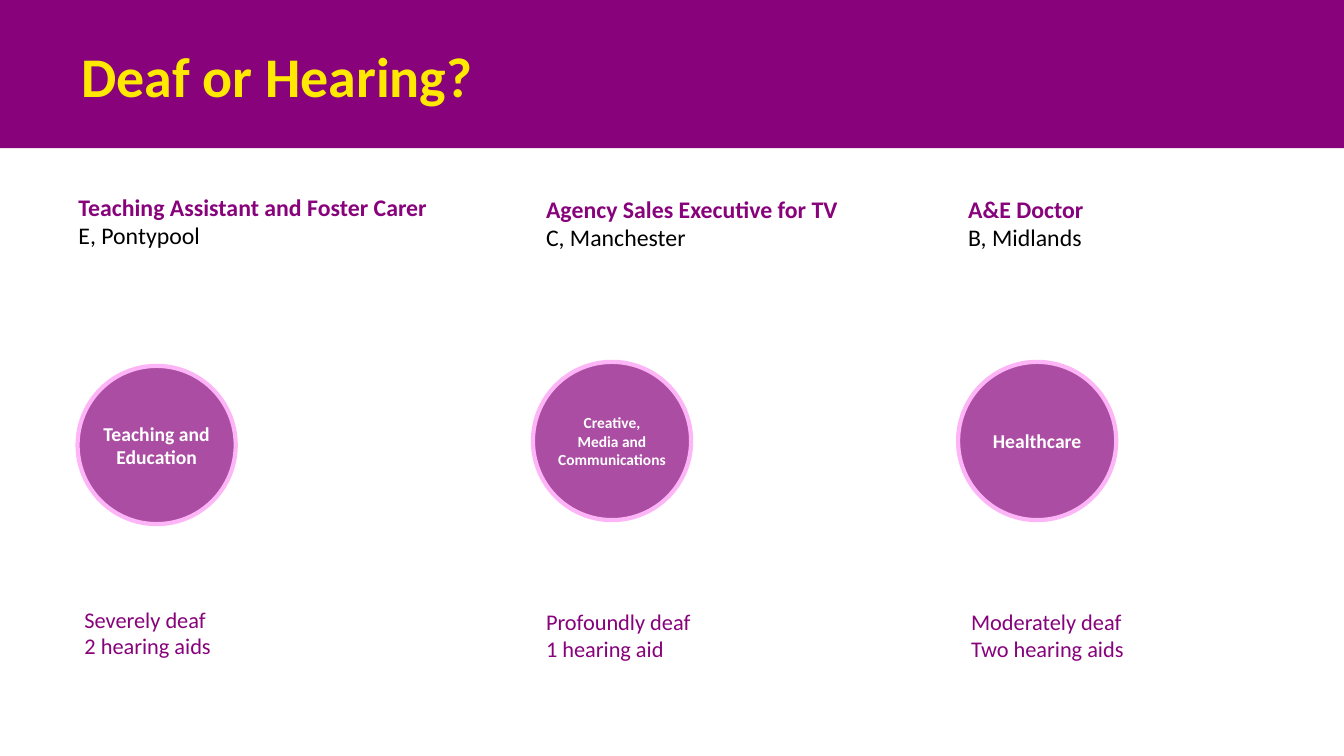
from pptx import Presentation
from pptx.dml.color import RGBColor
from pptx.enum.shapes import MSO_SHAPE
from pptx.enum.text import MSO_ANCHOR, PP_ALIGN
from pptx.util import Inches, Pt

RECTANGLE, OVAL = MSO_SHAPE.RECTANGLE, MSO_SHAPE.OVAL
TOP, MIDDLE = MSO_ANCHOR.TOP, MSO_ANCHOR.MIDDLE
LEFT, CENTER = PP_ALIGN.LEFT, PP_ALIGN.CENTER
COLORS = {
    "purple": "87027B",
    "yellow": "FFE900",
    "circle": "AB4EA3",
    "ring": "FEB5F7",
    "white": "FFFFFF",
    "black": "000000",
}
WIDE_INSETS = (0.13, 0.07)
NARROW_INSETS = (0.1, 0.05)


def color(name):
    return RGBColor.from_string(COLORS[name])


def write(shape, lines, size, insets, anchor=TOP, align=LEFT):
    frame = shape.text_frame
    frame.word_wrap = True
    frame.vertical_anchor = anchor
    frame.margin_left = frame.margin_right = Inches(insets[0])
    frame.margin_top = frame.margin_bottom = Inches(insets[1])
    frame.text = "\n".join(text for text, _, _ in lines)
    for paragraph, (_, ink, bold) in zip(frame.paragraphs, lines):
        paragraph.alignment = align
        paragraph.font.name = "Calibri"
        paragraph.font.size = Pt(size)
        paragraph.font.bold = bold
        paragraph.font.color.rgb = color(ink)


prs = Presentation()
prs.slide_width, prs.slide_height = Inches(13.34), Inches(7.5)
slide = prs.slides.add_slide(prs.slide_layouts[5])
shapes = slide.shapes

band = shapes.add_shape(RECTANGLE, 0, 0, prs.slide_width, Inches(1.47))
band.shadow.inherit = False
band.fill.solid()
band.fill.fore_color.rgb = color("purple")
band.line.fill.background()
title = shapes.title
title._element.addprevious(band._element)
title.left, title.top = Inches(0.68), Inches(0.35)
title.width, title.height = Inches(9.03), Inches(0.79)
write(title, [("Deaf or Hearing?", "yellow", True)], 40, WIDE_INSETS, MIDDLE)

people = [
    ("Teaching Assistant and Foster Carer", "E, Pontypool", (0.68, 4.49),
     ["Teaching and Education"], 14, (0.77, 3.63),
     ["Severely deaf", "2 hearing aids"], (0.74, 2.71), NARROW_INSETS),
    ("Agency Sales Executive for TV", "C, Manchester", (5.29, 3.95),
     ["Creative,\vMedia and", "Communications"], 11, (5.29, 3.59),
     ["Profoundly deaf", "1 hearing aid"], (5.29, 2.76), WIDE_INSETS),
    ("A&E Doctor", "B, Midlands", (9.48, 2.73),
     ["Healthcare"], 14, (9.51, 3.59),
     ["Moderately deaf", "Two hearing aids"], (9.51, 3.7), WIDE_INSETS),
]

for (job, place, (job_left, job_width), sector, sector_size, (circle_left, circle_top),
     hearing, (hearing_left, hearing_width), insets) in people:
    job_box = shapes.add_textbox(
        Inches(job_left), Inches(1.86), Inches(job_width), Inches(0.79))
    write(job_box, [(job, "purple", True), (place, "black", False)], 17, insets)

    circle = shapes.add_shape(
        OVAL, Inches(circle_left), Inches(circle_top), Inches(1.57), Inches(1.57))
    circle.shadow.inherit = False
    circle.fill.solid()
    circle.fill.fore_color.rgb = color("circle")
    circle.line.color.rgb = color("ring")
    circle.line.width = Pt(3)
    write(circle, [(text, "white", True) for text in sector], sector_size,
          (0, 0), MIDDLE, CENTER)

    hearing_box = shapes.add_textbox(
        Inches(hearing_left), Inches(5.96), Inches(hearing_width), Inches(0.79))
    write(hearing_box, [(text, "purple", False) for text in hearing], 16, insets)

prs.save("out.pptx")
